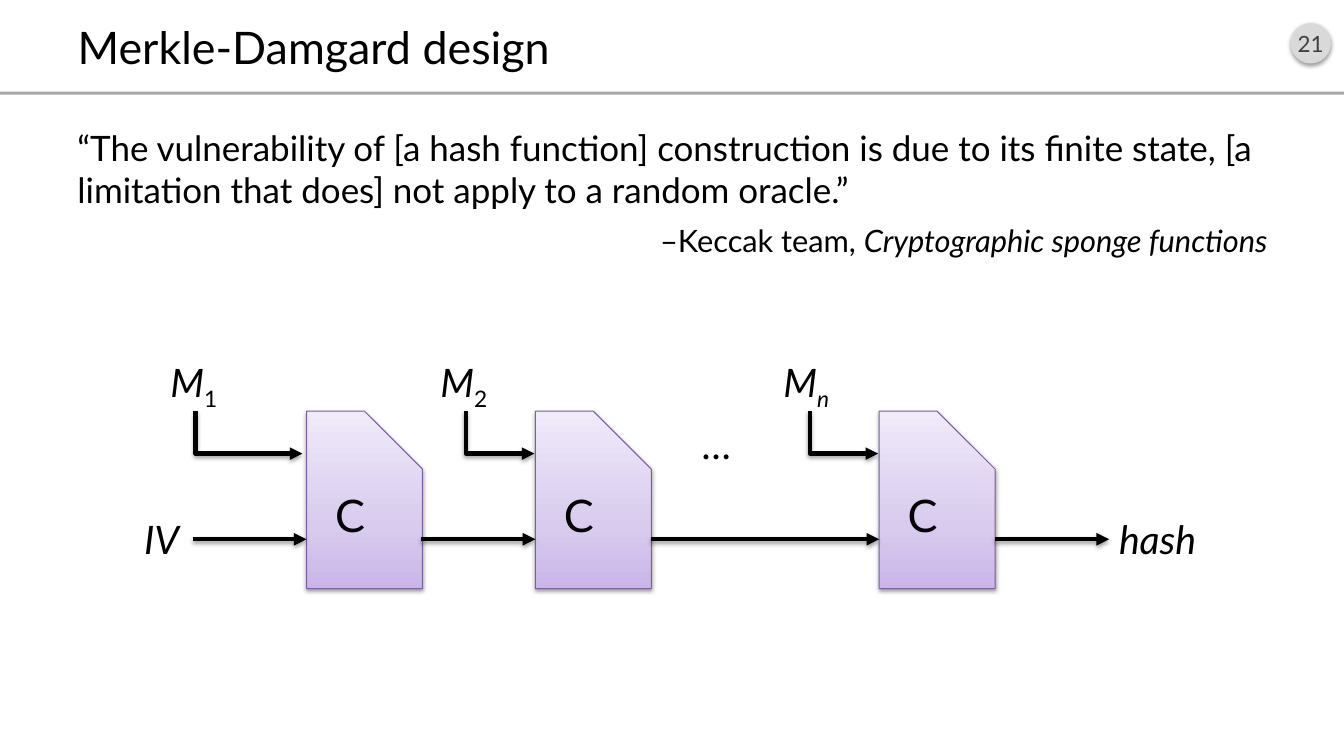
"""Builds the Merkle-Damgard design slide."""
from lxml.etree import SubElement, fromstring
from pptx import Presentation
from pptx.dml.color import RGBColor
from pptx.enum.shapes import MSO_CONNECTOR as CONNECTOR, MSO_SHAPE as SHAPE
from pptx.enum.text import MSO_ANCHOR as ANCHOR, MSO_AUTO_SIZE as FIT, PP_ALIGN as ALIGN
from pptx.oxml.ns import nsdecls, qn
from pptx.util import Pt

PX = 9144
BLACK = "000000"
rgb = RGBColor.from_string

SHADOW = (
    f'<a:effectLst {nsdecls("a")}><a:outerShdw blurRad="40000" dist="20000" dir="5400000" '
    'rotWithShape="0"><a:srgbClr val="000000"><a:alpha val="38000"/></a:srgbClr>'
    '</a:outerShdw></a:effectLst>'
)
STOPS = "".join(
    f'<a:gs pos="{position * 1000}"><a:srgbClr val="{color}"/></a:gs>'
    for position, color in ((0, "C9B5E8"), (35, "D8CBEE"), (100, "F0EAF9"))
)
GRADIENT = (
    f'<a:gradFill {nsdecls("a")} rotWithShape="1"><a:gsLst>{STOPS}</a:gsLst>'
    '<a:lin ang="16200000" scaled="0"/></a:gradFill>'
)


def write(paragraph, runs, size, color=BLACK, align=ALIGN.LEFT):
    """Fill a paragraph with (text, italic, baseline) runs."""
    paragraph.alignment = align
    for text, italic, baseline in runs:
        run = paragraph.add_run()
        run.text = text
        for name, value in {"name": "Lato", "size": Pt(size), "italic": italic}.items():
            setattr(run.font, name, value)
        run.font.color.rgb = rgb(color)
        if baseline:
            run.font._element.set("baseline", str(baseline * 1000))


def add_box(kind, left, top, width, height):
    """Add a preset shape, or a text box when kind is None."""
    box = [side * PX for side in (left, top, width, height)]
    if kind is None:
        return slide.shapes.add_textbox(*box)
    shape = slide.shapes.add_shape(kind, *box)
    shape.shadow.inherit = False
    return shape


presentation = Presentation()
presentation.slide_width, presentation.slide_height = 1333 * PX, 750 * PX
slide = presentation.slides.add_slide(presentation.slide_layouts[5])

title = slide.shapes.title
for name, value in {"left": 67, "top": 16, "width": 1200, "height": 60}.items():
    setattr(title, name, value * PX)
title.text_frame.vertical_anchor = ANCHOR.MIDDLE
title.text_frame.auto_size = FIT.NONE
write(title.text_frame.paragraphs[0], [("Merkle-Damgard design", False, 0)], 32)

rule = add_box(SHAPE.RECTANGLE, 0, 91, 1333, 3)
badge = add_box(SHAPE.OVAL, 1280, 23, 40, 40)
for shape, color in ((rule, "A6A6A6"), (badge, "D9D9D9")):
    shape.fill.solid()
    shape.fill.fore_color.rgb = rgb(color)
    shape.line.fill.background()
badge.shadow.inherit = True
badge._element.spPr.append(fromstring(SHADOW))
badge.text_frame.margin_left = badge.text_frame.margin_right = 0
badge.text_frame.vertical_anchor = ANCHOR.MIDDLE
write(badge.text_frame.paragraphs[0], [("21", False, 0)], 16, "404040", ALIGN.CENTER)

quote = add_box(None, 67, 121, 1200, 575).text_frame
quote.word_wrap = True
write(quote.paragraphs[0], [(
    "“The vulnerability of [a hash function] construction is due to its finite state, "
    "[a limitation that does] not apply to a random oracle.”", False, 0)], 25)
write(quote.add_paragraph(), [
    ("–Keccak team, ", False, 0), ("Cryptographic sponge functions", True, 0)],
    22, align=ALIGN.RIGHT)
for paragraph in quote.paragraphs:
    paragraph.space_before = Pt(8)

for left in (304, 531, 872):
    compressor = add_box(SHAPE.SNIP_1_RECTANGLE, left, 408, 115, 176)
    compressor.adjustments[0] = 0.5
    compressor.shadow.inherit = True
    compressor._element.spPr.insert(2, fromstring(GRADIENT))
    compressor.line.color.rgb = rgb("7D60A0")
    compressor.line.width = Pt(0.75)
    compressor._element.spPr.append(fromstring(SHADOW))
    compressor.text_frame.vertical_anchor = ANCHOR.MIDDLE
    write(compressor.text_frame.paragraphs[0], [("C", False, 0)], 32, align=ALIGN.CENTER)

labels = [
    (133, 506, 58, [("IV", True, 0)]),
    (159, 351, 71, [("M", True, 0), ("1", False, -25)]),
    (427, 351, 71, [("M", True, 0), ("2", False, -25)]),
    (767, 351, 71, [("M", True, 0), ("n", True, -25)]),
    (1100, 506, 101, [("hash", True, 0)]),
    (687, 412, 71, [("…", True, 0)]),
]
for left, top, width, runs in labels:
    frame = add_box(None, left, top, width, 57).text_frame
    frame.word_wrap = len(runs) > 1 or runs[0][0] == "…"
    frame.auto_size = FIT.SHAPE_TO_FIT_TEXT
    write(frame.paragraphs[0], runs, 28)

STATE_Y, INPUT_TOP, INPUT_Y = 535, 408, 451
arrows = [(start, STATE_Y, end, STATE_Y) for start, end in (
    (191, 304), (418, 531), (646, 872), (987, 1100))]
arrows += [(start, INPUT_TOP, end, INPUT_Y) for start, end in (
    (194, 301), (462, 531), (803, 872))]
for x1, y1, x2, y2 in arrows:
    bent = y1 != y2
    if bent:
        middle_x, middle_y = (x1 + x2) // 2, (y1 + y2) // 2
        width, height = y2 - y1, x2 - x1
        x1, x2 = middle_x + width // 2, middle_x - width // 2
        y1, y2 = middle_y - height // 2, middle_y + height // 2
    arrow = slide.shapes.add_connector(
        CONNECTOR.ELBOW if bent else CONNECTOR.STRAIGHT,
        *(value * PX for value in (x1, y1, x2, y2)))
    arrow.line.color.rgb = rgb(BLACK)
    arrow.line.width = Pt(3)
    properties = arrow._element.spPr
    if bent:
        properties.find(qn("a:xfrm")).set("rot", "16200000")
        properties.find(qn("a:prstGeom")).set("prst", "bentConnector2")
    SubElement(properties.find(qn("a:ln")), qn("a:tailEnd"), type="triangle")
    properties.append(fromstring(SHADOW))

presentation.save("out.pptx")
